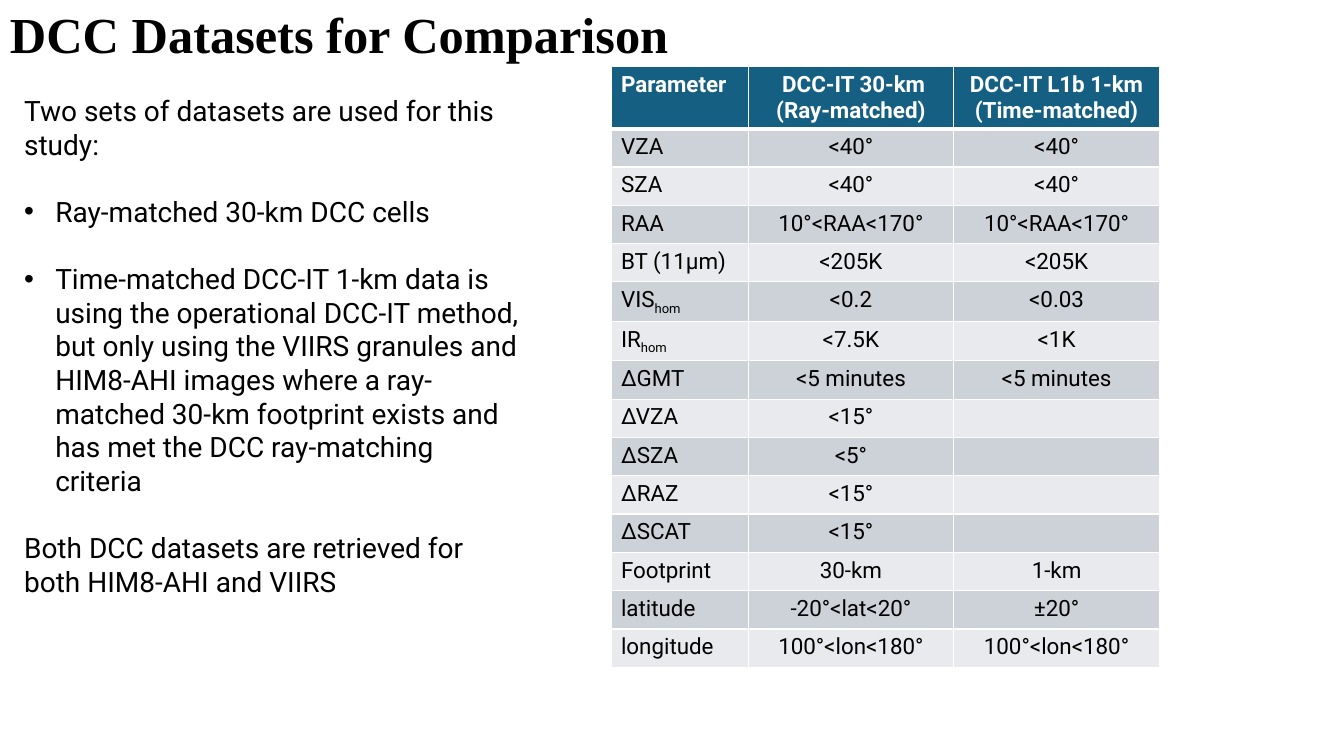
from dataclasses import dataclass

import lxml.etree
import pptx
import pptx.dml.color
import pptx.enum.text
import pptx.oxml.ns
import pptx.util

PX = 9144  # EMU per px, 100 px to the inch
BODY_FONT = "Roboto"
TITLE_FONT = "Times New Roman"
BLACK, WHITE, TEAL = "000000", "FFFFFF", "156082"
BANDS = ("CCD2D8", "E8EAED")
LEFT = pptx.enum.text.PP_ALIGN.LEFT
CENTER = pptx.enum.text.PP_ALIGN.CENTER


@dataclass(frozen=True)
class Style:
    size: int
    font: str = BODY_FONT
    color: str = BLACK
    bold: bool = False


@dataclass(frozen=True)
class Criterion:
    name: str
    ray_matched: str
    time_matched: str = ""
    subscript: str = ""


@dataclass(frozen=True)
class Statement:
    text: str
    bulleted: bool = False


TITLE = Style(36, TITLE_FONT, bold=True)
BODY = Style(20)
CELL = Style(16)
HEADING = Style(16, color=WHITE, bold=True)

STATEMENTS = [
    Statement("Two sets of datasets are used for this study:"),
    Statement("Ray-matched 30-km DCC cells", True),
    Statement("Time-matched DCC-IT 1-km data is using the operational DCC-IT method, "
              "but only using the VIIRS granules and HIM8-AHI images where a ray-matched "
              "30-km footprint exists and has met the DCC ray-matching criteria", True),
    Statement("Both DCC datasets are retrieved for both HIM8-AHI and VIIRS"),
]

HEADINGS = [["Parameter"], [" DCC-IT 30-km", "(Ray-matched)"],
            ["DCC-IT L1b 1-km", "(Time-matched)"]]

CRITERIA = [
    Criterion("VZA", "<40°", "<40°"),
    Criterion("SZA", "<40°", "<40°"),
    Criterion("RAA", "10°<RAA<170°", "10°<RAA<170°"),
    Criterion("BT (11µm)", "<205K", "<205K"),
    Criterion("VIS", "<0.2", "<0.03", "hom"),
    Criterion("IR", "<7.5K", "<1K", "hom"),
    Criterion("∆GMT", "<5 minutes", "<5 minutes"),
    Criterion("∆VZA", "<15°"),
    Criterion("∆SZA", "<5°"),
    Criterion("∆RAZ", "<15°"),
    Criterion("∆SCAT", "<15°"),
    Criterion("Footprint", "30-km", "1-km"),
    Criterion("latitude", "-20°<lat<20°", "±20°"),
    Criterion("longitude", "100°<lon<180°", "100°<lon<180°"),
]


def px(length: int) -> pptx.util.Emu:
    return pptx.util.Emu(length * PX)


def rgb(value: str) -> pptx.dml.color.RGBColor:
    return pptx.dml.color.RGBColor.from_string(value)


def add_element(parent, tag: str, **attributes: str):
    return lxml.etree.SubElement(parent, pptx.oxml.ns.qn(tag), **attributes)


def add_run(paragraph, text: str, style: Style, subscript: bool = False) -> None:
    run = paragraph.add_run()
    run.text = text
    run.font.size = pptx.util.Pt(style.size)
    run.font.name = style.font
    run.font.bold = style.bold
    run.font.color.rgb = rgb(style.color)
    if subscript:
        run.font._element.set("baseline", "-25000")


def add_text_frame(slide, left: int, top: int, width: int, height: int):
    frame = slide.shapes.add_textbox(px(left), px(top), px(width), px(height)).text_frame
    frame.word_wrap = True
    return frame


def paragraph_at(frame, index: int):
    return frame.paragraphs[0] if index == 0 else frame.add_paragraph()


def add_bullet(paragraph) -> None:
    properties = paragraph._p.get_or_add_pPr()
    properties.set("marL", str(px(31)))
    properties.set("indent", str(-px(31)))
    add_element(properties, "a:buFont", typeface="Arial")
    add_element(properties, "a:buChar", char="•")


def draw_title(slide) -> None:
    frame = add_text_frame(slide, 0, 0, 1150, 74)
    frame.vertical_anchor = pptx.enum.text.MSO_ANCHOR.MIDDLE
    frame.paragraphs[0].line_spacing = 0.9
    add_run(frame.paragraphs[0], "DCC Datasets for Comparison", TITLE)


def draw_statements(slide) -> None:
    frame = add_text_frame(slide, 14, 88, 511, 481)
    frame.auto_size = pptx.enum.text.MSO_AUTO_SIZE.SHAPE_TO_FIT_TEXT
    for index, statement in enumerate(STATEMENTS):
        paragraph = paragraph_at(frame, index)
        if index:
            paragraph.space_before = pptx.util.Pt(24)
        if statement.bulleted:
            add_bullet(paragraph)
        add_run(paragraph, statement.text, BODY)


def format_cell(cell, fill: str, top: int = 1, bottom: int = 1) -> None:
    properties = cell._tc.get_or_add_tcPr()
    for side, points in (("L", 1), ("R", 1), ("T", top), ("B", bottom)):
        line = add_element(properties, f"a:ln{side}", w=str(pptx.util.Pt(points)))
        add_element(add_element(line, "a:solidFill"), "a:srgbClr", val=WHITE)
    cell.fill.solid()
    cell.fill.fore_color.rgb = rgb(fill)


def write_cell(cell, lines: list[str], style: Style, column: int) -> None:
    for index, text in enumerate(lines):
        paragraph = paragraph_at(cell.text_frame, index)
        paragraph.alignment = CENTER if column else LEFT
        if text:
            add_run(paragraph, text, style)
        else:
            add_element(paragraph._p, "a:endParaRPr", sz=str(style.size * 100))


def draw_criteria(slide) -> None:
    table = slide.shapes.add_table(len(CRITERIA) + 1, len(HEADINGS),
                                   px(606), px(66), px(544), px(592)).table
    for column, width in zip(table.columns, (136, 204, 204)):
        column.width = px(width)
    for index, row in enumerate(table.rows):
        row.height = px(38 if index else 60)

    # Header row
    for column, lines in enumerate(HEADINGS):
        cell = table.cell(0, column)
        format_cell(cell, TEAL, bottom=3)
        write_cell(cell, lines, HEADING, column)

    # Banded body rows
    for row, criterion in enumerate(CRITERIA, start=1):
        values = (criterion.name, criterion.ray_matched, criterion.time_matched)
        for column, value in enumerate(values):
            cell = table.cell(row, column)
            format_cell(cell, BANDS[(row - 1) % 2], top=3 if row == 1 else 1)
            write_cell(cell, [value], CELL, column)
        if criterion.subscript:
            name = table.cell(row, 0).text_frame.paragraphs[0]
            add_run(name, criterion.subscript, CELL, subscript=True)


def main() -> None:
    presentation = pptx.Presentation()
    presentation.slide_width, presentation.slide_height = px(1333), px(750)
    slide = presentation.slides.add_slide(presentation.slide_layouts[6])
    draw_criteria(slide)
    draw_statements(slide)
    draw_title(slide)
    presentation.save("out.pptx")


if __name__ == "__main__":
    main()
